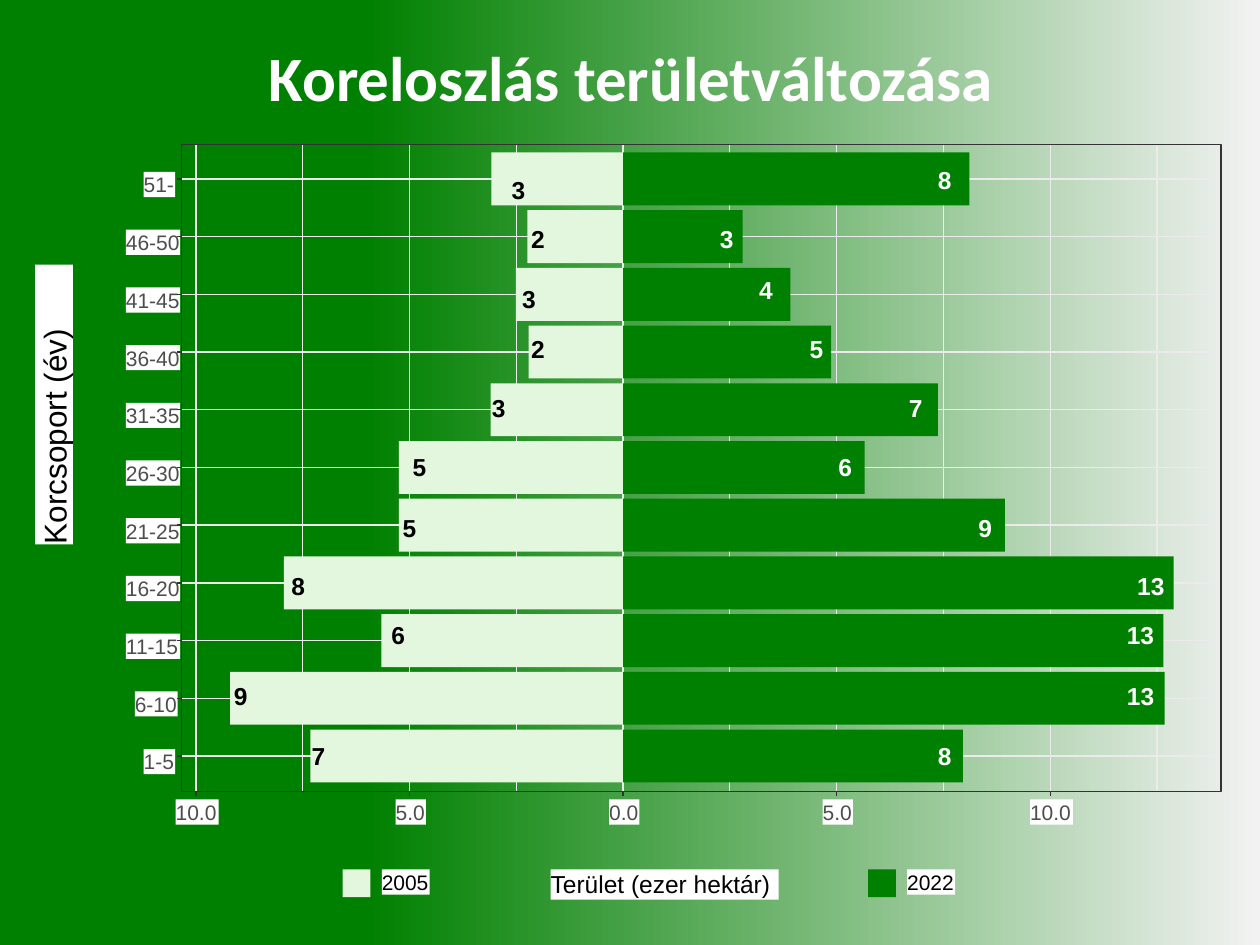
from copy import deepcopy

from pptx import Presentation
from pptx.dml.color import RGBColor
from pptx.enum.shapes import MSO_CONNECTOR, MSO_SHAPE
from pptx.enum.text import MSO_ANCHOR, MSO_AUTO_SIZE, PP_ALIGN
from pptx.oxml.ns import qn
from pptx.oxml.xmlchemy import OxmlElement
from pptx.util import Inches, Pt

RECTANGLE, STRAIGHT = MSO_SHAPE.RECTANGLE, MSO_CONNECTOR.STRAIGHT
TOP, MIDDLE = MSO_ANCHOR.TOP, MSO_ANCHOR.MIDDLE
CENTER, LEFT = PP_ALIGN.CENTER, PP_ALIGN.LEFT
FIT_TEXT = MSO_AUTO_SIZE.SHAPE_TO_FIT_TEXT

# Content: age group, then for each year
# (area in thousand hectares, label inset from the bar end, label drop)
TITLE = "Koreloszlás területváltozása"
AREA_TITLE, AGE_TITLE = "Terület (ezer hektár)", "Korcsoport (év)"
ROWS = [
    ("51-", (3.08, 0.16, 0.09), (8.11, 0.14, 0.01)),
    ("46-50", (2.24, 0.03, 0.02), (2.80, 0.07, 0.02)),
    ("41-45", (2.51, 0.05, 0.04), (3.92, 0.14, -0.03)),
    ("36-40", (2.21, 0.02, -0.02), (4.87, 0.06, -0.02)),
    ("31-35", (3.10, 0.01, -0.01), (7.37, 0.12, -0.01)),
    ("26-30", (5.25, 0.11, 0), (5.66, 0.10, 0)),
    ("21-25", (5.25, 0.03, 0.02), (8.94, 0.10, 0.02)),
    ("16-20", (7.94, 0.06, 0.03), (12.89, 0.07, 0.03)),
    ("11-15", (5.66, 0.08, -0.04), (12.65, 0.07, -0.04)),
    ("6-10", (9.20, 0.03, -0.02), (12.68, 0.08, -0.02)),
    ("1-5", (7.32, 0.01, 0), (7.96, 0.09, 0)),
]
MINOR_TICKS = [-7.5, -2.5, 2.5, 7.5, 12.5]
MAJOR_TICKS = [-10, -5, 0, 5, 10]
LEGEND = [("2005", "pale", 2.72), ("2022", "green", 6.89)]

THEME = {
    "green": "008000", "pale": "E3F6DE", "white": "FFFFFF", "black": "000000",
    "grid": "EBEBEB", "frame": "333333", "label": "4D4D4D", "mist": "F2F2F2",
    "heading": "Calibri", "body": "Arial",
    "title": 36, "age_title": 18, "value": 14, "small": 12, "line": 0.75,
}

# Plot geometry in inches
PLOT_LEFT, PLOT_TOP, PLOT_WIDTH, PLOT_HEIGHT = 1.44, 1.15, 8.25, 5.13
PLOT_RIGHT, PLOT_BOTTOM = PLOT_LEFT + PLOT_WIDTH, PLOT_TOP + PLOT_HEIGHT
ZERO, UNIT = 4.945, 0.339
FIRST_ROW, ROW_STEP, BAR_HEIGHT = 1.42, 0.458, 0.42
DIGIT_WIDTH, VALUE_HEIGHT, TICK, LEGEND_TOP = 0.11, 0.24, 0.035, 6.9


def colour(name):
    return RGBColor.from_string(THEME[name])


def area_x(area):
    return ZERO + area * UNIT


def row_y(row):
    return FIRST_ROW + row * ROW_STEP


def write(frame, text, size, ink, font="body", bold=False, align=LEFT):
    para = frame.paragraphs[0]
    para.alignment = align
    span = para.add_run()
    span.text = text
    span.font.name, span.font.size = THEME[font], Pt(THEME[size])
    span.font.bold, span.font.color.rgb = bold, colour(ink)


def add_box(parent, left, top, width, height, fill=None, line=None):
    box = parent.add_shape(RECTANGLE, *map(Inches, (left, top, width, height)))
    box.shadow.inherit = False
    if fill:
        box.fill.solid()
        box.fill.fore_color.rgb = colour(fill)
    else:
        box.fill.background()
    if line:
        box.line.color.rgb, box.line.width = colour(line), Pt(THEME["line"])
    else:
        box.line.fill.background()
    return box


def add_label(parent, text, left, top, width, height, fill="white", size="small",
              ink="label", bold=False, wrap=False, upward=False):
    if fill:
        box = add_box(parent, left, top, width, height, fill)
    else:
        box = parent.add_textbox(*map(Inches, (left, top, width, height)))
    frame = box.text_frame
    frame.margin_left = frame.margin_right = frame.margin_top = frame.margin_bottom = 0
    frame.vertical_anchor = TOP
    frame.word_wrap, frame.auto_size = wrap, FIT_TEXT
    if upward:
        frame._txBody.bodyPr.set("vert", "vert270")
    write(frame, text, size, ink, bold=bold)


def add_line(parent, x1, y1, x2, y2, ink):
    line = parent.add_connector(STRAIGHT, *map(Inches, (x1, y1, x2, y2)))
    line.line.color.rgb, line.line.width = colour(ink), Pt(THEME["line"])
    line._element.spPr.append(OxmlElement("a:effectLst"))


def paint_background(page):
    fill = page.background.fill
    fill.gradient()
    fill.gradient_angle = 0
    stop_list = next(page._element.iter(qn("a:gsLst")))
    stop_list.insert(1, deepcopy(stop_list[0]))
    for stop, position, name in zip(fill.gradient_stops, (0, 0.29, 1),
                                    ("green", "green", "mist")):
        stop.position, stop.color.rgb = position, colour(name)


def add_grid(parent):
    for area in MINOR_TICKS + MAJOR_TICKS:
        add_line(parent, area_x(area), PLOT_BOTTOM, area_x(area), PLOT_TOP, "grid")
    for row in range(len(ROWS)):
        add_line(parent, PLOT_LEFT, row_y(row), PLOT_RIGHT, row_y(row), "grid")


def add_bars(parent):
    sides = [(1, -1, "pale", "black"), (2, 1, "green", "white")]
    for column, side, fill, _ in sides:
        for row, record in enumerate(ROWS):
            length = record[column][0] * UNIT
            add_box(parent, min(ZERO, ZERO + side * length),
                    row_y(row) - BAR_HEIGHT / 2, length, BAR_HEIGHT, fill)
    for column, side, _, ink in sides:
        for row, record in enumerate(ROWS):
            area, inset, drop = record[column]
            text = f"{area:.0f}"
            width = DIGIT_WIDTH * len(text)
            left = area_x(side * area) - side * inset - (width if side > 0 else 0)
            add_label(parent, text, left, row_y(row) + drop - VALUE_HEIGHT / 2, width,
                      VALUE_HEIGHT, fill=None, size="value", ink=ink, bold=True)


def add_axes(parent):
    add_box(parent, PLOT_LEFT, PLOT_TOP, PLOT_WIDTH, PLOT_HEIGHT, line="frame")
    for row, (age, *_) in enumerate(ROWS):
        extra = len(age) - 3
        add_label(parent, age, 1.14 - 0.07 * extra, row_y(row) - 0.055,
                  0.25 + 0.09 * extra, 0.2)
        add_line(parent, PLOT_LEFT - TICK, row_y(row), PLOT_LEFT, row_y(row), "frame")
    for area in MAJOR_TICKS:
        x = area_x(area)
        text = f"{abs(area):.1f}"
        width = 0.34 if len(text) == 4 else 0.24
        add_line(parent, x, PLOT_BOTTOM + TICK, x, PLOT_BOTTOM, "frame")
        add_label(parent, text, x + 0.01 - width / 2, 6.345, width, 0.2)


def add_legend(parent):
    add_label(parent, AREA_TITLE, 4.37, LEGEND_TOP, 1.81, 0.24,
              size="value", ink="black", wrap=True)
    add_label(parent, AGE_TITLE, 0.28, 2.1, 0.3, 2.22,
              size="age_title", ink="black", wrap=True, upward=True)
    for year, fill, left in LEGEND:
        add_box(parent, left, LEGEND_TOP, 0.22, 0.22, fill)
        add_label(parent, year, left + 0.31, LEGEND_TOP, 0.38, 0.2, ink="black")


def main():
    deck = Presentation()
    deck.slide_width, deck.slide_height = Inches(10), Inches(7.5)
    page = deck.slides.add_slide(deck.slide_layouts[5])
    paint_background(page)

    # Title
    title = page.shapes.title
    title.left, title.top, title.width, title.height = map(Inches, (0.51, 0.13, 9, 0.95))
    title.text_frame.vertical_anchor = MIDDLE
    write(title.text_frame, TITLE, "title", "white", font="heading", bold=True, align=CENTER)

    # Age pyramid
    pyramid = page.shapes.add_group_shape().shapes
    for draw in (add_grid, add_bars, add_axes, add_legend):
        draw(pyramid)
    deck.save("out.pptx")


if __name__ == "__main__":
    main()
